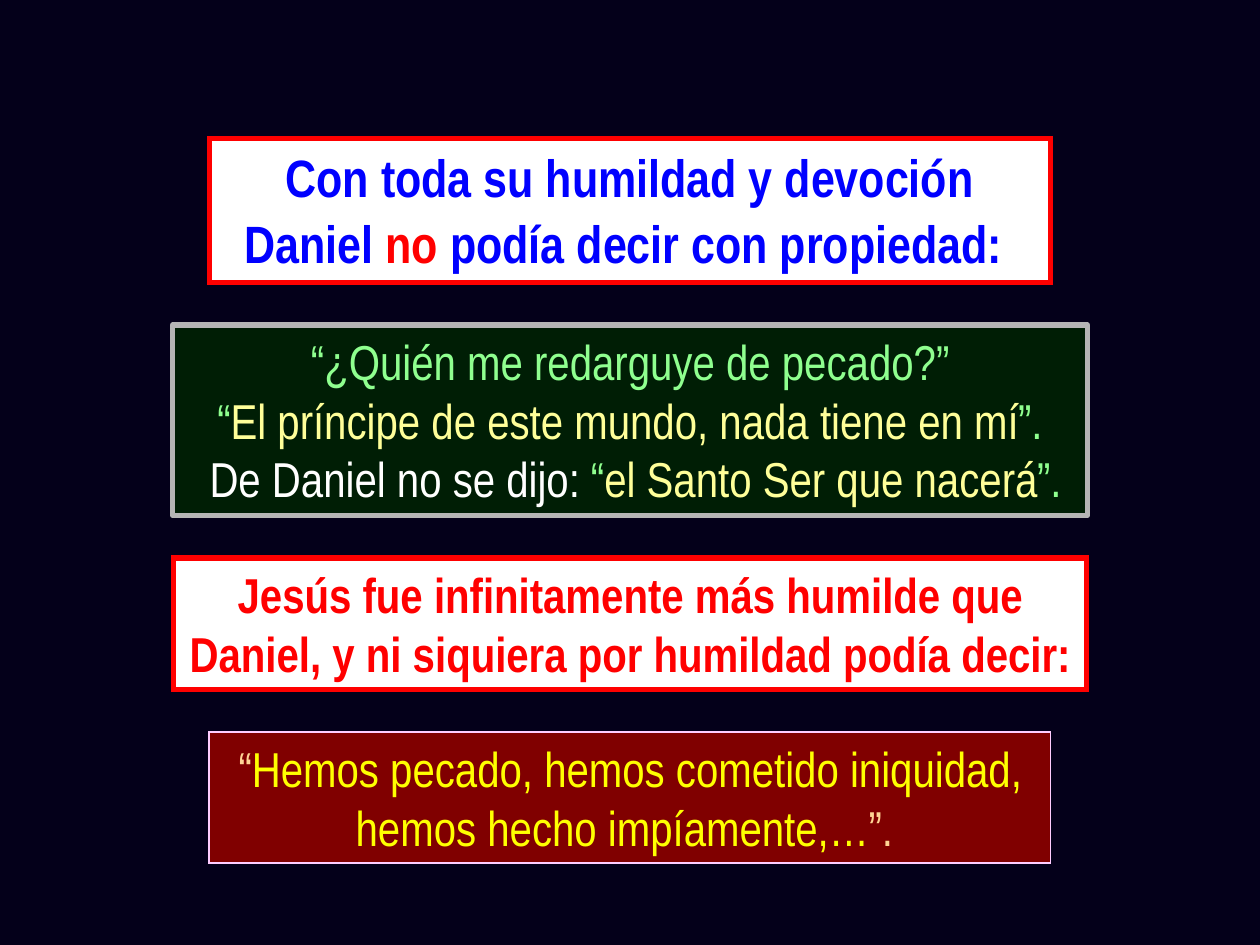
"""Builds a slide of four stacked text panels about Daniel and Jesus."""
from lxml import etree
from pptx import Presentation
from pptx.dml.color import RGBColor
from pptx.enum import shapes, text
from pptx.oxml import ns
from pptx.util import Inches, Pt

SLIDE_WIDTH, SLIDE_HEIGHT = 10, 7.5
BACKGROUND = "04001A"
FONT = "Arial Narrow"
BLUE, RED, WHITE = "0000FF", "FF0000", "FFFFFF"
GREEN, CREAM, YELLOW, PEACH = "8FFF8F", "FFFF99", "FFFF00", "FFD495"

PANELS = [
    dict(top=1.1, width=6.68, height=1.14, fill=WHITE, border=RED, weight=3,
         size=30, bold=True, join="miter", paragraphs=[
             [("Con toda su humildad y devoción Daniel ", BLUE), ("no ", RED),
              ("podía decir con propiedad:", BLUE), (" ", BLUE, 32)]]),
    dict(top=2.58, width=7.26, height=1.51, fill="001E05", border="B5B5B5", weight=3,
         size=28, bold=False, join="round", paragraphs=[
             [("“¿Quién me redarguye de pecado?”", GREEN)],
             [("“", GREEN), ("El príncipe de este mundo, nada tiene en mí", CREAM),
              ("”.", GREEN)],
             [(" ", GREEN), ("De Daniel no se dijo: ", WHITE), ("“", GREEN),
              ("el Santo Ser que nacerá", CREAM), ("”.", GREEN)]]),
    dict(top=4.43, width=7.25, height=1.04, fill=WHITE, border=RED, weight=3,
         size=28, bold=True, join="miter", paragraphs=[
             [("Jesús fue infinitamente más humilde que Daniel, "
               "y ni siquiera por humildad podía decir: ", RED)]]),
    dict(top=5.81, width=6.68, height=1.04, fill="800000", border="FFCCFF", weight=0.75,
         size=28, bold=False, join="miter", paragraphs=[
             [("“", PEACH),
              ("Hemos pecado, hemos cometido iniquidad, hemos hecho impíamente,…", YELLOW),
              ("”. ", PEACH)]]),
]


def paint(fill, color):
    fill.solid()
    fill.fore_color.rgb = RGBColor.from_string(color)


def add_text(paragraph, wording, *, color, size, bold):
    run = paragraph.add_run()
    run.text = wording
    run.font.name = FONT
    run.font.size = Pt(size)
    run.font.bold = bold
    paint(run.font.fill, color)


def add_panel(slide, *, top, width, height, fill, border, weight, size, bold, join, paragraphs):
    left = (SLIDE_WIDTH - width) / 2
    panel = slide.shapes.add_shape(shapes.MSO_SHAPE.RECTANGLE, Inches(left), Inches(top),
                                   Inches(width), Inches(height))
    panel.shadow.inherit = False
    paint(panel.fill, fill)
    paint(panel.line.fill, border)
    panel.line.width = Pt(weight)
    etree.SubElement(panel.line._get_or_add_ln(), ns.qn(f"a:{join}"))

    frame = panel.text_frame
    frame.word_wrap = True
    frame.auto_size = text.MSO_AUTO_SIZE.SHAPE_TO_FIT_TEXT
    frame.vertical_anchor = text.MSO_ANCHOR.TOP
    for index, pieces in enumerate(paragraphs):
        paragraph = frame.add_paragraph() if index else frame.paragraphs[0]
        paragraph.alignment = text.PP_ALIGN.CENTER
        for wording, color, *own_size in pieces:
            add_text(paragraph, wording, color=color, bold=bold,
                     size=own_size[0] if own_size else size)


def main():
    deck = Presentation()
    deck.slide_width, deck.slide_height = Inches(SLIDE_WIDTH), Inches(SLIDE_HEIGHT)
    slide = deck.slides.add_slide(deck.slide_layouts[6])
    paint(slide.background.fill, BACKGROUND)
    for panel in PANELS:
        add_panel(slide, **panel)
    deck.save("out.pptx")


if __name__ == "__main__":
    main()
